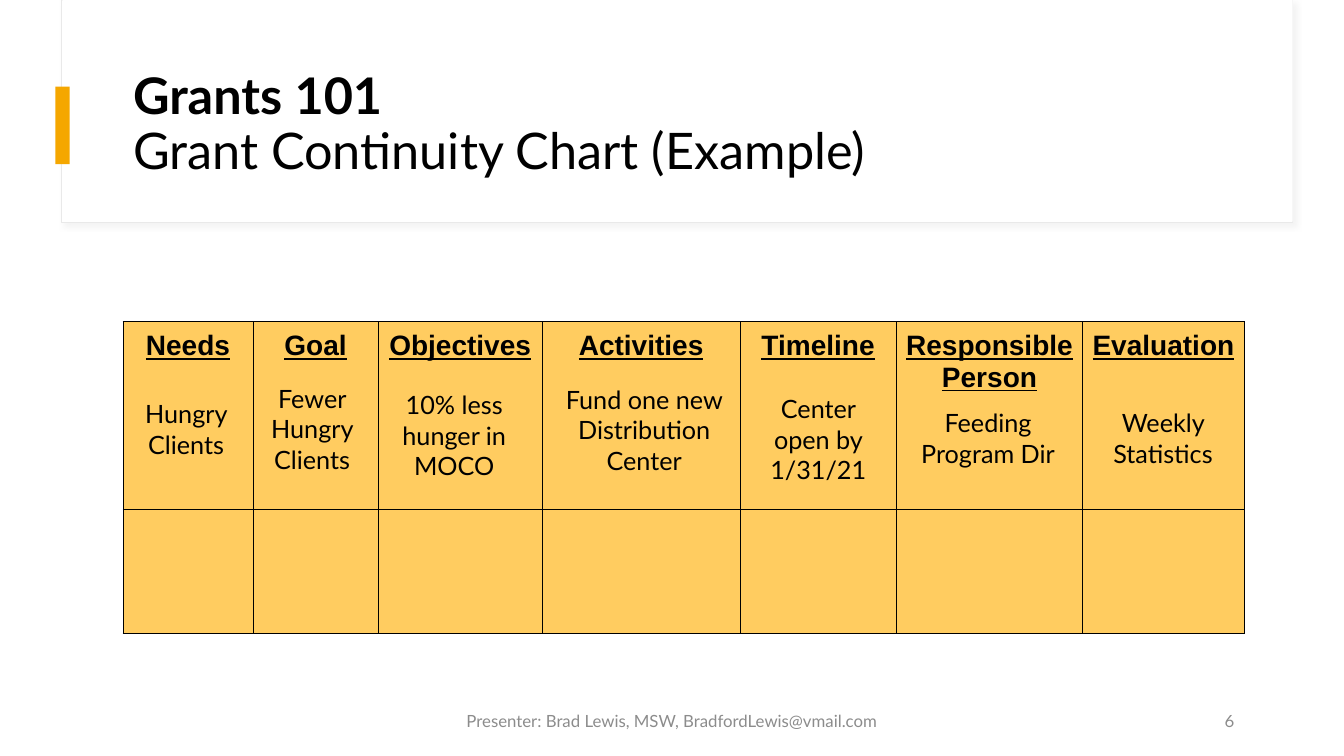
from lxml import etree
from pptx import Presentation
from pptx import util as u
from pptx.dml.color import RGBColor
from pptx.enum import shapes, text
from pptx.oxml import ns

WIDTH, HEIGHT = 13.33, 7.5
MARGIN, CONTENT_WIDTH = 1.22, 11.12
WHITE = RGBColor(0xFF, 0xFF, 0xFF)
BLACK = RGBColor(0x00, 0x00, 0x00)
AMBER = RGBColor(0xF5, 0xA7, 0x00)
PALE_AMBER = RGBColor(0xFF, 0xCC, 0x60)
FRAME_GREY = RGBColor(0xE9, 0xE9, 0xE9)
SHADOW_GREY = RGBColor(0xD9, 0xD9, 0xD9)
FOOTER_GREY = RGBColor(0x8C, 0x8C, 0x8C)

COLUMNS = [
    ("Needs", 1.29),
    ("Goal", 1.24),
    ("Objectives", 1.63),
    ("Activities", 1.96),
    ("Timeline", 1.55),
    ("Responsible Person", 1.85),
    ("Evaluation", 1.6),
]
ROW_HEIGHTS = [1.86, 1.23]
ENTRIES = [
    ("Hungry Clients", 0, 0.71, 1.25, 0.71),
    ("Fewer Hungry Clients", 1.25, 0.56, 1.25, 1.01),
    ("10% less hunger in MOCO", 2.66, 0.47, 1.25, 1.31),
    ("Fund one new Distribution Center", 4.24, 0.57, 1.86, 1.01),
    ("Center open by 1/31/21", 6.27, 0.66, 1.25, 1.01),
    ("Feeding Program Dir", 7.68, 0.8, 1.8, 0.71),
    ("Weekly Statistics", 9.56, 0.8, 1.51, 0.71),
]


def inches(*lengths):
    return [u.Inches(length) for length in lengths]


def add_run(paragraph, words, size, color, font="Lato", bold=False, underline=False):
    run = paragraph.add_run()
    run.text = words
    run.font.name = font
    run.font.size = u.Pt(size)
    run.font.color.rgb = color
    run.font.bold = bold
    run.font.underline = underline


def add_label(slide, box, words, size, color, alignment):
    frame = slide.shapes.add_textbox(*inches(*box)).text_frame
    frame.word_wrap = True
    frame.vertical_anchor = text.MSO_ANCHOR.MIDDLE
    paragraph = frame.paragraphs[0]
    paragraph.alignment = alignment
    add_run(paragraph, words, size, color)


def add_panel(slide, box, fill, line=None):
    shape = slide.shapes.add_shape(shapes.MSO_SHAPE.RECTANGLE, *inches(*box))
    shape.shadow.inherit = False
    shape.fill.solid()
    shape.fill.fore_color.rgb = fill
    if line is None:
        shape.line.fill.background()
    else:
        shape.line.color.rgb = line
        shape.line.width = u.Pt(0.75)
    return shape


def add_soft_shadow(shape):
    effects = shape.element.spPr.find(ns.qn("a:effectLst"))
    shadow = etree.SubElement(
        effects, ns.qn("a:outerShdw"), blurRad=str(u.Pt(4)), dist=str(u.Pt(3)),
        dir="2700000", algn="tl", rotWithShape="0")
    color = etree.SubElement(shadow, ns.qn("a:srgbClr"), val=str(SHADOW_GREY))
    etree.SubElement(color, ns.qn("a:alpha"), val="30000")


def build_header(slide, left, top, width, height):
    frame = add_panel(slide, (left, top, width, height), WHITE, FRAME_GREY)
    add_soft_shadow(frame)
    add_panel(slide, (left + 0.01, top, width - 0.01, height - 0.01), WHITE)
    add_panel(slide, (left - 0.06, top + 0.86, 0.14, 0.77), AMBER)

    title = slide.shapes.title
    title.left, title.top, title.width, title.height = inches(
        MARGIN, top + 0.6, CONTENT_WIDTH, 1.29)
    slide.shapes.element.append(title.element)
    title.text_frame.word_wrap = True
    title.text_frame.auto_size = text.MSO_AUTO_SIZE.NONE
    title.text_frame.vertical_anchor = text.MSO_ANCHOR.MIDDLE
    paragraph = title.text_frame.paragraphs[0]
    paragraph.alignment = text.PP_ALIGN.LEFT
    paragraph.line_spacing = 0.9
    add_run(paragraph, "Grants 101", 36, BLACK, bold=True)
    paragraph.add_line_break()
    add_run(paragraph, "Grant Continuity Chart (Example)", 36, BLACK)


def style_cell(cell):
    properties = cell._tc.get_or_add_tcPr()
    for side in ("lnL", "lnR", "lnT", "lnB"):
        border = etree.SubElement(properties, ns.qn(f"a:{side}"), w=str(u.Pt(0.75)))
        fill = etree.SubElement(border, ns.qn("a:solidFill"))
        etree.SubElement(fill, ns.qn("a:srgbClr"), val=str(BLACK))
    cell.fill.solid()
    cell.fill.fore_color.rgb = PALE_AMBER
    cell.margin_left = cell.margin_right = u.Inches(0.09)
    cell.margin_top = cell.margin_bottom = u.Inches(0.09)


def build_continuity_chart(slide, left, top, width, height):
    table = slide.shapes.add_table(
        len(ROW_HEIGHTS), len(COLUMNS), *inches(left, top, width, height)).table
    for row, row_height in zip(table.rows, ROW_HEIGHTS):
        row.height = u.Inches(row_height)
    for index, (heading, column_width) in enumerate(COLUMNS):
        table.columns[index].width = u.Inches(column_width)
        paragraph = table.cell(0, index).text_frame.paragraphs[0]
        paragraph.alignment = text.PP_ALIGN.CENTER
        add_run(paragraph, heading, 20, BLACK, "Arial", bold=True, underline=True)
    for cell in table.iter_cells():
        style_cell(cell)
    for words, across, down, entry_width, entry_height in ENTRIES:
        box = (left + across, top + down, entry_width, entry_height)
        add_label(slide, box, words, 18, BLACK, text.PP_ALIGN.CENTER)


def build_footer(slide, left, top, width, height):
    presenter_width, number_width = 4.5, 3
    presenter_box = ((WIDTH - presenter_width) / 2, top, presenter_width, height)
    number_box = (left + width - number_width, top, number_width, height)
    add_label(slide, presenter_box, "Presenter: Brad Lewis, MSW, BradfordLewis@vmail.com",
              12, FOOTER_GREY, text.PP_ALIGN.CENTER)
    add_label(slide, number_box, "6", 12, FOOTER_GREY, text.PP_ALIGN.RIGHT)


def main():
    presentation = Presentation()
    presentation.slide_width, presentation.slide_height = inches(WIDTH, HEIGHT)
    slide = presentation.slides.add_slide(presentation.slide_layouts[5])
    slide.background.fill.solid()
    slide.background.fill.fore_color.rgb = WHITE
    build_header(slide, 0.61, 0, 12.21, 2.21)
    build_continuity_chart(slide, MARGIN, 3.19, CONTENT_WIDTH, sum(ROW_HEIGHTS))
    build_footer(slide, MARGIN, 6.95, CONTENT_WIDTH, 0.4)
    presentation.save("out.pptx")


if __name__ == "__main__":
    main()
